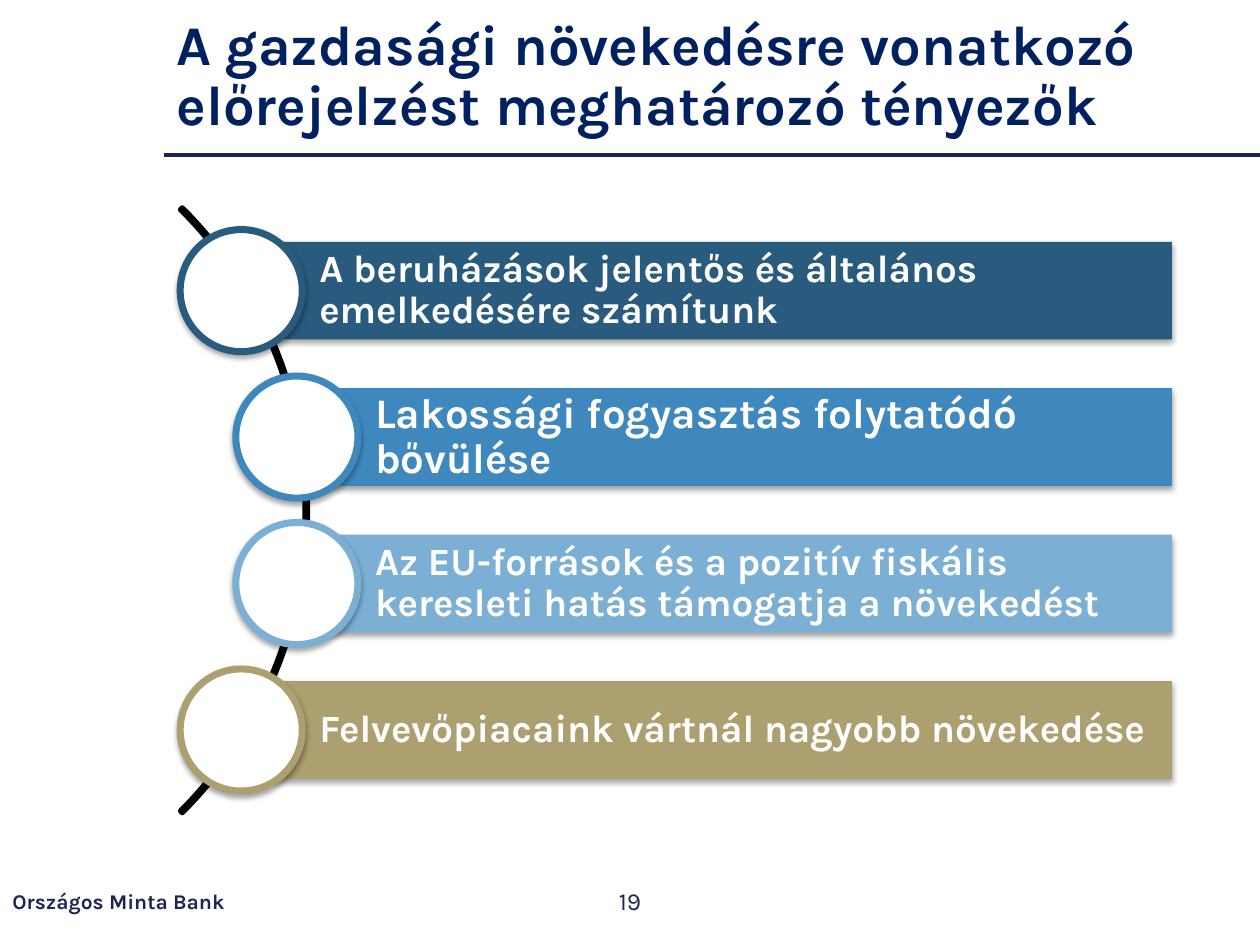
import pptx
import pptx.util
import pptx.dml.color
import pptx.enum.shapes
import pptx.enum.text
import pptx.oxml
import pptx.oxml.ns

Inches, Pt = pptx.util.Inches, pptx.util.Pt
SHAPE = pptx.enum.shapes.MSO_SHAPE
ALIGN = pptx.enum.text.PP_ALIGN
MIDDLE = pptx.enum.text.MSO_ANCHOR.MIDDLE
W, H = 10, 7.5
FONT = "Karla"
COLORS = {
    "title": "002060", "rule": "1E2452", "footer": "202653",
    "white": "FFFFFF", "arc": "000000", "navy": "295B7E",
    "blue": "3E88BE", "sky": "7BAFD4", "sand": "AC9F70",
}
FACTORS = [
    ("A beruházások jelentős és általános emelkedésére számítunk", "navy", 22, 0),
    ("Lakossági fogyasztás folytatódó bővülése", "blue", 24, 1),
    ("Az EU-források és a pozitív fiskális keresleti hatás támogatja a növekedést", "sky", 22, 1),
    ("Felvevőpiacaink vártnál nagyobb növekedése", "sand", 22, 0),
]


def rgb(name):
    return pptx.dml.color.RGBColor.from_string(COLORS[name])


def place(sp, x, y, w, h):
    sp.left, sp.top, sp.width, sp.height = map(Inches, (x, y, w, h))


def write(sp, text, size, color, bold=True, align=ALIGN.LEFT, spacing=None):
    tf = sp.text_frame
    tf.text = text
    tf.word_wrap = True
    tf.auto_size = pptx.enum.text.MSO_AUTO_SIZE.NONE
    tf.vertical_anchor = MIDDLE
    p = tf.paragraphs[0]
    p.alignment = align
    p.line_spacing = spacing
    font = p.runs[0].font
    font.name, font.size, font.bold = FONT, Pt(size), bold
    font.color.rgb = rgb(color)


def add_effects(sp, shadow=""):
    sp._element.spPr.append(pptx.oxml.parse_xml(
        f'<a:effectLst {pptx.oxml.ns.nsdecls("a")}>{shadow}</a:effectLst>'))


def add_soft_shadow(sp):
    add_effects(sp, (
        f'<a:outerShdw blurRad="{Pt(3.1)}" dist="{Pt(1.8)}" dir="5400000" rotWithShape="0">'
        '<a:srgbClr val="000000"><a:alpha val="35000"/></a:srgbClr></a:outerShdw>'))


def add_header(s, x, y, w, h):
    rule = s.shapes.add_connector(
        pptx.enum.shapes.MSO_CONNECTOR.STRAIGHT,
        Inches(x), Inches(y + h), Inches(x + w), Inches(y + h))
    rule.line.color.rgb = rgb("rule")
    rule.line.width = Pt(2.25)
    add_effects(rule)
    title = s.shapes.title
    place(title, x, y, w, h)
    write(title, "A gazdasági növekedésre vonatkozó előrejelzést meghatározó tényezők",
          32, "title", spacing=0.9)


def add_footer(s, x, y, w, h):
    parts = [
        ("Országos Minta Bank", 0, 0.34, 12, True, ALIGN.LEFT),
        ("19", 0.39, 0.22, 14, False, ALIGN.CENTER),
    ]
    for text, left, width, size, bold, align in parts:
        sp = s.shapes.add_textbox(0, 0, 0, 0)
        place(sp, x + left * w, y, width * w, h)
        write(sp, text, size, "footer", bold, align)


def add_arc(s, right, middle, diameter):
    arc = s.shapes.add_shape(SHAPE.BLOCK_ARC, 0, 0, 0, 0)
    place(arc, right - diameter, middle - diameter / 2, diameter, diameter)
    for i, value in enumerate((189, 27, 0.003)):
        arc.adjustments[i] = value
    arc.fill.background()
    arc.line.color.rgb = rgb("arc")
    arc.line.width = Pt(3)
    arc.shadow.inherit = False


def add_factor(s, x, y, w, row, text, color, size):
    disc, bar_h = row * 5 / 6, row * 2 / 3
    bar = s.shapes.add_shape(SHAPE.RECTANGLE, 0, 0, 0, 0)
    place(bar, x + disc / 2, y + (row - bar_h) / 2, w - disc / 2, bar_h)
    bar.fill.solid()
    bar.fill.fore_color.rgb = rgb(color)
    bar.line.fill.background()
    add_soft_shadow(bar)
    write(bar, text, size, "white", spacing=0.9)
    tf = bar.text_frame
    tf.margin_left = Inches(0.8 * bar_h)
    tf.margin_top = tf.margin_right = tf.margin_bottom = Inches(0.06)

    circle = s.shapes.add_shape(SHAPE.OVAL, 0, 0, 0, 0)
    place(circle, x, y + (row - disc) / 2, disc, disc)
    circle.fill.solid()
    circle.fill.fore_color.rgb = rgb("white")
    circle.line.color.rgb = rgb(color)
    circle.line.width = Pt(4)
    add_soft_shadow(circle)


def add_factors(s, x, y, w, h):
    row = h / len(FACTORS)
    add_arc(s, x + 0.87 * row, y + h / 2, 1.46 * h)
    for i, (text, color, size, level) in enumerate(FACTORS):
        indent = level * 0.38 * row
        add_factor(s, x + indent, y + i * row, w - indent, row, text, color, size)


def main():
    prs = pptx.Presentation()
    prs.slide_width, prs.slide_height = Inches(W), Inches(H)
    s = prs.slides.add_slide(prs.slide_layouts[5])
    add_header(s, 0.13 * W, 0, 0.87 * W, 0.164 * H)
    add_factors(s, 0.143 * W, 0.23 * H, 0.787 * W, 0.62 * H)
    add_footer(s, 0, 0.927 * H, W, 0.053 * H)
    prs.save("out.pptx")


if __name__ == "__main__":
    main()
